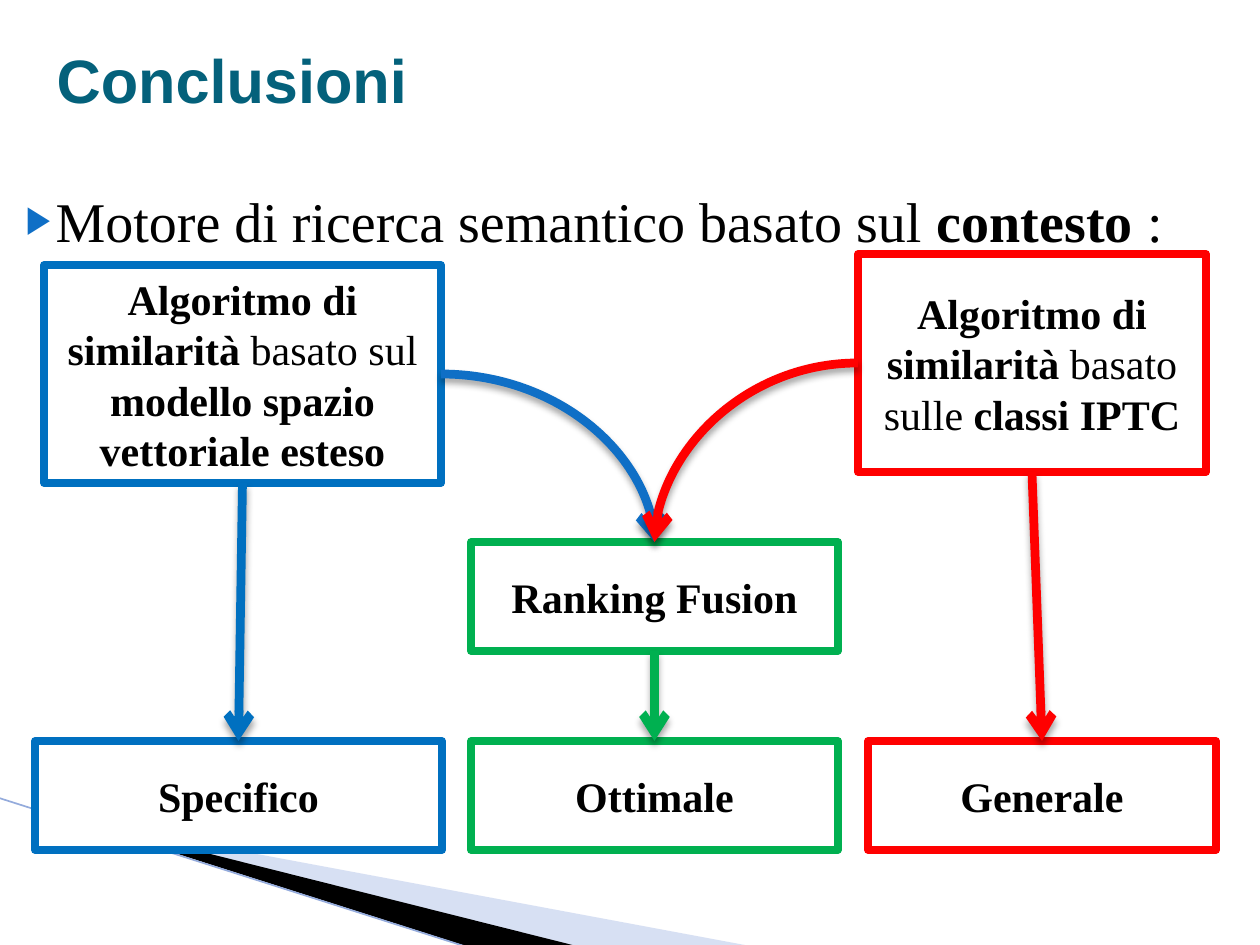
import pptx
import pptx.util
import pptx.dml.color
import pptx.enum.shapes
import pptx.enum.text
import pptx.oxml
import pptx.oxml.ns

RGB = pptx.dml.color.RGBColor
BLUE = RGB(0x00, 0x70, 0xC0)
ACCENT = RGB(0x0F, 0x6F, 0xC6)
RED = RGB(0xFF, 0x00, 0x00)
GREEN = RGB(0x00, 0xB0, 0x50)
TEAL = RGB(0x04, 0x61, 0x7B)
PALE = RGB(0x9D, 0xB2, 0xE1)
EDGE = RGB(0x94, 0xAB, 0xDC)
BLACK = RGB(0x00, 0x00, 0x00)
WHITE = RGB(0xFF, 0xFF, 0xFF)

PX = 914400 / 126
NS = pptx.oxml.ns.nsdecls("a")
TOP, LEFT, BOTTOM, RIGHT = range(4)
SHAPE = pptx.enum.shapes.MSO_SHAPE
CONNECTOR = pptx.enum.shapes.MSO_CONNECTOR
ALIGN = pptx.enum.text.PP_ALIGN
ANCHOR = pptx.enum.text.MSO_ANCHOR


def px(*values):
    return [pptx.util.Emu(round(v * PX)) for v in values]


def add_runs(p, runs, font, size, color):
    for text, bold in runs:
        r = p.add_run()
        r.text = text
        r.font.name = font
        r.font.size = pptx.util.Pt(size)
        r.font.bold = bold
        r.font.color.rgb = color


prs = pptx.Presentation()
prs.slide_width, prs.slide_height = px(1260, 945)
s = prs.slides.add_slide(prs.slide_layouts[1])

wedges = [
    ([(69, 819), (750, 946), (575, 946)], PALE, 40),
    ([(67, 818), (576, 946), (469, 947), (68, 819)], BLACK, 100),
]
for points, color, alpha in wedges:
    fb = s.shapes.build_freeform(*points[0], scale=PX)
    fb.add_line_segments(points[1:], close=True)
    sp = fb.convert_to_shape()
    sp.shadow.inherit = False
    sp.fill.solid()
    sp.fill.fore_color.rgb = color
    sp.line.fill.background()
    if alpha < 100:
        clr = sp.fill._xPr.find(".//" + pptx.oxml.ns.qn("a:srgbClr"))
        clr.append(pptx.oxml.parse_xml(f'<a:alpha {NS} val="{alpha * 1000}"/>'))

edge = s.shapes.add_connector(CONNECTOR.STRAIGHT, *px(-1, 798, 467, 947))
edge.line.color.rgb = EDGE
edge.line.width = pptx.util.Pt(0.95)
edge._element.spPr.append(pptx.oxml.parse_xml(f"<a:effectLst {NS}/>"))

title = s.shapes.title
title.left, title.top, title.width, title.height = px(44, 0, 1134, 158)
tf = title.text_frame
tf.vertical_anchor = ANCHOR.MIDDLE
p = tf.paragraphs[0]
p.alignment = ALIGN.LEFT
add_runs(p, [("Conclusioni", True)], "Arial", 35, TEAL)

body = s.placeholders[1]
body.left, body.top, body.width, body.height = px(0, 175, 1260, 100)
tf = body.text_frame
tf.margin_top, = px(11)
p = tf.paragraphs[0]
pPr = p._p.get_or_add_pPr()
indent, hanging = px(43, -30)
pPr.set("marL", str(indent))
pPr.set("indent", str(hanging))
for bullet in (
    f'<a:buClr {NS}><a:srgbClr val="{ACCENT}"/></a:buClr>',
    f'<a:buSzPct {NS} val="68000"/>',
    f'<a:buFont {NS} typeface="Arial"/>',
    f'<a:buChar {NS} char="▶"/>',
):
    pPr.append(pptx.oxml.parse_xml(bullet))
p.space_before = pptx.util.Pt(0)
add_runs(p, [("Motore di ricerca semantico basato sul ", False), ("contesto", True),
             (" :", False)], "Times New Roman", 32, BLACK)

boxes = [
    ("vector", (44, 265, 397, 218), BLUE,
     [("Algoritmo di similarità ", True), ("basato sul ", False),
      ("modello spazio vettoriale esteso", True)]),
    ("iptc", (858, 254, 348, 218), RED,
     [("Algoritmo di similarità ", True), ("basato sulle ", False), ("classi IPTC", True)]),
    ("fusion", (471, 542, 367, 109), GREEN, [("Ranking Fusion", True)]),
    ("specific", (35, 741, 407, 109), BLUE, [("Specifico", True)]),
    ("general", (868, 741, 348, 109), RED, [("Generale", True)]),
    ("optimal", (471, 741, 367, 109), GREEN, [("Ottimale", True)]),
]
nodes = {}
for key, place, color, runs in boxes:
    sp = s.shapes.add_shape(SHAPE.RECTANGLE, *px(*place))
    sp.shadow.inherit = False
    sp.fill.solid()
    sp.fill.fore_color.rgb = WHITE
    sp.line.color.rgb = color
    sp.line.width = pptx.util.Pt(4.33)
    tf = sp.text_frame
    tf.word_wrap = True
    tf.vertical_anchor = ANCHOR.MIDDLE
    p = tf.paragraphs[0]
    p.alignment = ALIGN.CENTER
    add_runs(p, runs, "Times New Roman", 24, BLACK)
    nodes[key] = sp

arrows = [
    ("vector", BOTTOM, "specific", BLUE),
    ("fusion", BOTTOM, "optimal", GREEN),
    ("iptc", BOTTOM, "general", RED),
    ("vector", RIGHT, "fusion", ACCENT),
    ("iptc", LEFT, "fusion", RED),
]
for source, site, target, color in arrows:
    kind = CONNECTOR.STRAIGHT if site == BOTTOM else CONNECTOR.CURVE
    cn = s.shapes.add_connector(kind, 0, 0, 0, 0)
    cn.begin_connect(nodes[source], site)
    cn.end_connect(nodes[target], TOP)
    spPr = cn._element.spPr
    if kind == CONNECTOR.CURVE:
        spPr.find(pptx.oxml.ns.qn("a:prstGeom")).set("prst", "curvedConnector2")
    cn.line.color.rgb = color
    cn.line.width = pptx.util.Pt(5)
    cn.line._get_or_add_ln().append(pptx.oxml.parse_xml(f'<a:tailEnd {NS} type="arrow"/>'))
    spPr.append(pptx.oxml.parse_xml(
        f'<a:effectLst {NS}><a:outerShdw blurRad="50800" dist="38100" dir="5400000" '
        'rotWithShape="0"><a:srgbClr val="000000"><a:alpha val="35000"/></a:srgbClr>'
        '</a:outerShdw></a:effectLst>'))

prs.save("out.pptx")
